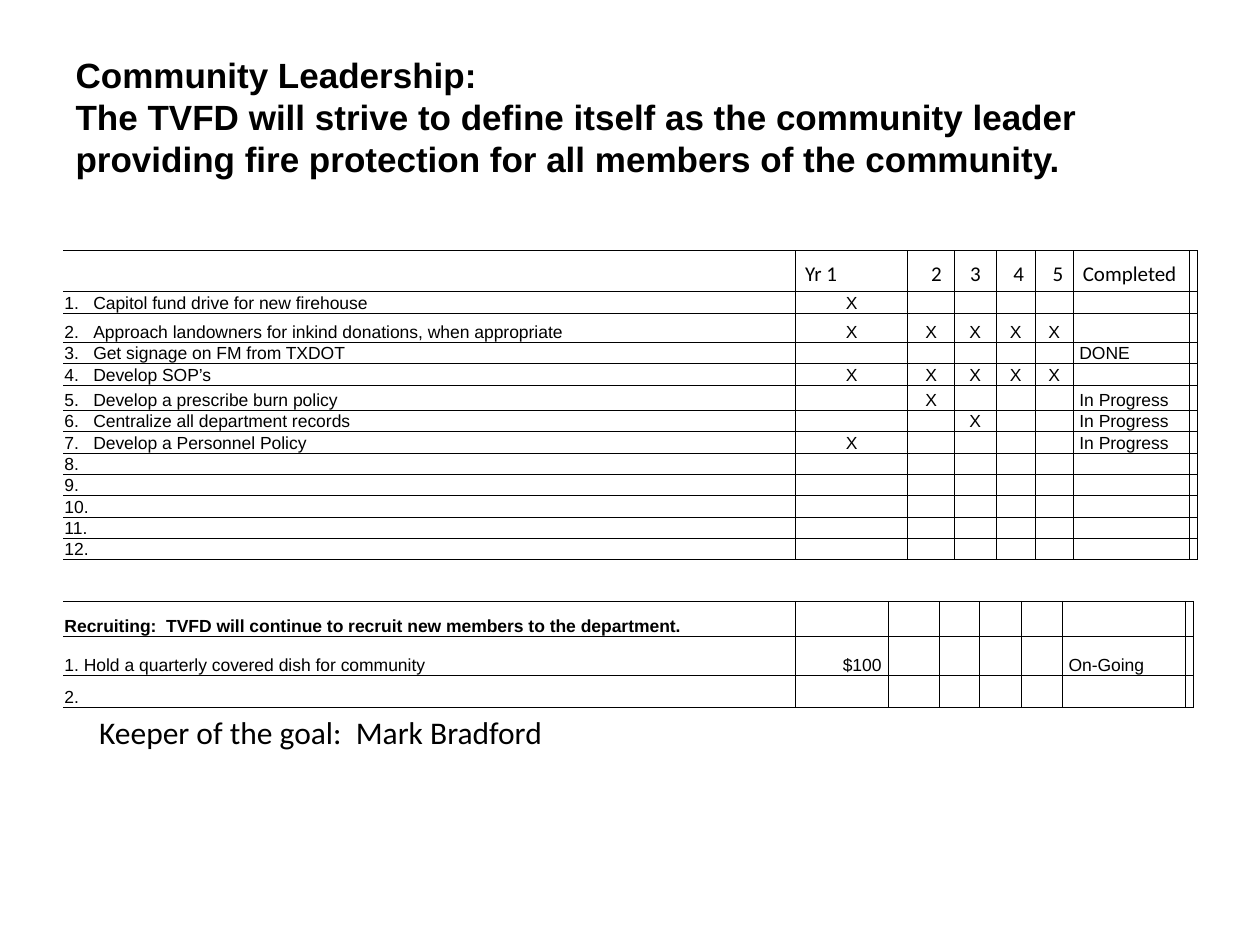
from lxml import etree
from pptx import Presentation
from pptx import util as u
from pptx.dml.color import RGBColor
from pptx.enum import text
from pptx.oxml.ns import qn

BLACK = RGBColor(0, 0, 0)
LEFT, CENTER, RIGHT = text.PP_ALIGN.LEFT, text.PP_ALIGN.CENTER, text.PP_ALIGN.RIGHT
LABEL_INDENT = 0.58
CELL_PADDING = 0.13

GOALS = [
    "Capitol fund drive for new firehouse",
    "Approach landowners for inkind donations, when appropriate",
    "Get signage on FM from TXDOT",
    "Develop SOP’s",
    "Develop a prescribe burn policy",
    "Centralize all department records",
    "Develop a Personnel Policy",
]
GOAL_YEARS = {1: [1], 2: [1, 2, 3, 4, 5], 4: [1, 2, 3, 4, 5], 5: [2], 6: [3], 7: [1]}
GOAL_STATUS = {3: "DONE", 5: "In Progress", 6: "In Progress", 7: "In Progress"}
GOAL_COLUMNS = [14.77, 2.26, 0.94, 0.84, 0.79, 0.76, 2.35, 0.16]
GOAL_ROWS = [0.83, 0.44, 0.58, 0.42, 0.44, 0.51] + [0.43] * 7
RECRUITING_COLUMNS = [14.77, 1.86, 1.03, 0.82, 0.85, 0.81, 2.48, 0.16]
RECRUITING_ROWS = [0.71, 0.78, 0.65]


class SlideBuilder:
    def __init__(self, slide):
        self.slide = slide

    def style(self, paragraph, font, size, bold=False):
        for run in paragraph.runs:
            run.font.name = font
            run.font.size = u.Pt(size)
            run.font.bold = bold
            run.font.color.rgb = BLACK

    def title(self, content, left, top, width, height):
        shape = self.slide.shapes.title
        shape.left, shape.top = u.Cm(left), u.Cm(top)
        shape.width, shape.height = u.Cm(width), u.Cm(height)
        frame = shape.text_frame
        frame.text = content
        frame.auto_size = text.MSO_AUTO_SIZE.NONE
        frame.vertical_anchor = text.MSO_ANCHOR.MIDDLE
        paragraph = frame.paragraphs[0]
        paragraph.alignment = LEFT
        paragraph.line_spacing = u.Pt(24)
        self.style(paragraph, "Arial", 20, True)

    def text_box(self, content, left, top, width, height, size, tabs=()):
        shape = self.slide.shapes.add_textbox(u.Cm(left), u.Cm(top), u.Cm(width), u.Cm(height))
        frame = shape.text_frame
        frame.word_wrap = True
        frame.text = content
        paragraph = frame.paragraphs[0]
        self.style(paragraph, "Calibri", size)
        if tabs:
            properties = paragraph._p.get_or_add_pPr()
            tab_list = etree.SubElement(properties, qn("a:tabLst"))
            for position in tabs:
                etree.SubElement(tab_list, qn("a:tab"), pos=str(u.Cm(position)), algn="l")

    def table(self, rows, left, top, widths, heights, bold_first=False, hanging=0):
        frame = self.slide.shapes.add_table(
            len(heights), len(widths), u.Cm(left), u.Cm(top), u.Cm(sum(widths)), u.Cm(sum(heights)))
        table = frame.table
        table.first_row = table.horz_banding = False
        for column, width in zip(table.columns, widths):
            column.width = u.Cm(width)
        for row, height in zip(table.rows, heights):
            row.height = u.Cm(height)
        for i, values in enumerate(rows):
            for j, value in enumerate(values):
                self.cell(table.cell(i, j), value, j, bold_first and i == 0, hanging)

    def cell(self, cell, value, column, bold, hanging):
        cell.margin_top = cell.margin_bottom = 0
        cell.margin_left = cell.margin_right = u.Cm(0.03 if column == 0 else 0)
        cell.vertical_anchor = text.MSO_ANCHOR.BOTTOM
        self.borders(cell, "RTB" if column == 0 else "LRTB")
        cell.fill.background()
        cell.text_frame.text = value
        paragraph = cell.text_frame.paragraphs[0]
        if not value:
            paragraph._p.get_or_add_endParaRPr().set("sz", "800")
            return
        self.style(paragraph, "Arial", 10, bold)
        if value == "X":
            paragraph.alignment = CENTER
        elif value.startswith("$"):
            paragraph.alignment = RIGHT
            cell.margin_right = u.Cm(CELL_PADDING)
        elif column:
            cell.margin_left = u.Cm(CELL_PADDING)
        elif hanging:
            properties = paragraph._p.get_or_add_pPr()
            properties.set("marL", str(u.Cm(hanging)))
            properties.set("indent", str(-u.Cm(hanging)))

    def borders(self, cell, sides):
        properties = cell._tc.get_or_add_tcPr()
        for side in "LRTB":
            line = etree.SubElement(properties, qn(f"a:ln{side}"), w=str(u.Pt(0.5)))
            if side in sides:
                fill = etree.SubElement(line, qn("a:solidFill"))
                etree.SubElement(fill, qn("a:srgbClr"), val=str(BLACK))
            else:
                etree.SubElement(line, qn("a:noFill"))


def goal_row(number):
    label = f"{number}."
    if number <= len(GOALS):
        label += "\t" + GOALS[number - 1]
    marks = ["X" if year in GOAL_YEARS.get(number, []) else "" for year in range(1, 6)]
    return [label, *marks, GOAL_STATUS.get(number, ""), ""]


def main():
    presentation = Presentation()
    presentation.slide_width, presentation.slide_height = u.Cm(25.4), u.Cm(19.05)
    builder = SlideBuilder(presentation.slides.add_slide(presentation.slide_layouts[5]))
    builder.title(
        "Community Leadership:\vThe TVFD will strive to define itself as the community leader "
        "providing fire protection for all members of the community.",
        1.27, 0.76, 22.86, 3.18)
    goals = [[""] * 8] + [goal_row(number) for number in range(1, 13)]
    builder.table(goals, 1.27, 5.05, GOAL_COLUMNS, GOAL_ROWS, hanging=LABEL_INDENT)
    recruiting = [
        ["Recruiting:  TVFD will continue to recruit new members to the department."] + [""] * 7,
        ["1. Hold a quarterly covered dish for community", "$100", "", "", "", "", "On-Going", ""],
        ["2."] + [""] * 7,
    ]
    builder.table(recruiting, 1.27, 12.12, RECRUITING_COLUMNS, RECRUITING_ROWS, bold_first=True)
    builder.text_box("Yr 1\t2\t3\t4\t5\tCompleted", 15.98, 5.13, 8.08, 0.76, 12,
                     tabs=(2.54, 3.33, 4.2, 4.99, 5.6))
    builder.text_box("Keeper of the goal:  Mark Bradford", 1.75, 14.25, 14.38, 1.02, 18)
    presentation.save("out.pptx")


if __name__ == "__main__":
    main()
